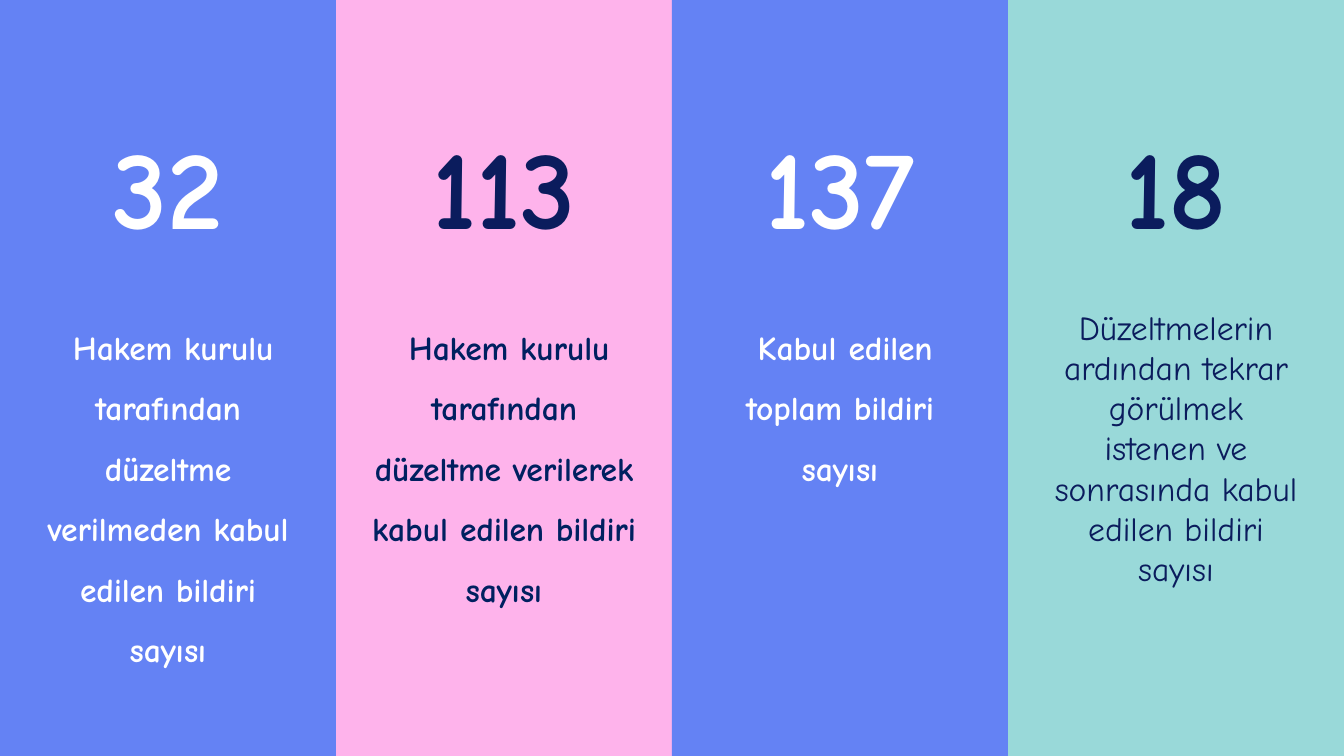
from dataclasses import dataclass

from pptx import Presentation
from pptx.dml.color import RGBColor
from pptx.enum.shapes import MSO_SHAPE
from pptx.enum.text import PP_ALIGN
from pptx.slide import Slide
from pptx.util import Inches, Pt

COLORS = {
    "blue": "6482F4",
    "pink": "FEB3EB",
    "mint": "99D9D9",
    "white": "FFFFFF",
    "navy": "0B1C5D",
    "ink": "002060",
}
FONT = "Comic Neue"
SLIDE_W, SLIDE_H = Inches(13.33), Inches(7.5)
COL, ROW = SLIDE_W / 100, SLIDE_H / 100
PANEL_COLS = 25
NUMBER_ROW, NUMBER_ROWS = 15.6, 18
CAPTION_ROW = 40.53
TEXT_COLS = 18.15


@dataclass(frozen=True)
class Run:
    text: str
    color: str
    size: int = 24
    bold: bool = True
    spacing: int = 0


@dataclass(frozen=True)
class Panel:
    fill: str
    number: Run
    caption: list[Run]
    caption_rows: float
    caption_cols: float = TEXT_COLS
    line_spacing: float = 1.5
    indent: float = 0.1


PANELS = [
    Panel("blue", Run("32", "white", 80), [
        Run("Hakem kurulu tarafından düzeltme verilmeden kabul edilen bildiri sayısı",
            "white", spacing=-10),
    ], 40.4),
    Panel("pink", Run("113", "navy", 80), [
        Run("Hakem kurulu tarafından düzeltme verilerek ", "ink", spacing=-10),
        Run("kabul ", "ink"),
        Run("edilen bildiri sayısı", "ink", spacing=-10),
    ], 40.4, caption_cols=20.18),
    Panel("blue", Run("137", "white", 80), [
        Run("Kabul ", "white"),
        Run("edilen toplam bildiri sayısı", "white", spacing=-10),
    ], 24.27),
    Panel("mint", Run("18", "navy", 80), [
        Run("Düzeltmelerin ardından tekrar görülmek istenen ve sonrasında kabul "
            "edilen bildiri sayısı", "navy", bold=False),
    ], 32.27, line_spacing=1, indent=0),
]


def rgb(name: str) -> RGBColor:
    return RGBColor.from_string(COLORS[name])


def add_background(s: Slide, left: float, fill: str) -> None:
    sp = s.shapes.add_shape(MSO_SHAPE.RECTANGLE, round(left * COL), 0,
                            round(PANEL_COLS * COL), SLIDE_H)
    sp.shadow.inherit = False
    sp.fill.solid()
    sp.fill.fore_color.rgb = rgb(fill)
    sp.line.fill.background()


def add_text(s: Slide, panel_left: float, top: float, cols: float, rows: float,
             runs: list[Run], line_spacing: float = 1, indent: float = 0) -> None:
    left = panel_left + (PANEL_COLS - cols) / 2
    sp = s.shapes.add_textbox(round(left * COL), round(top * ROW),
                              round(cols * COL), round(rows * ROW))
    tf = sp.text_frame
    tf.word_wrap = True
    tf.margin_left = tf.margin_right = tf.margin_top = tf.margin_bottom = 0
    p = tf.paragraphs[0]
    p.alignment = PP_ALIGN.CENTER
    p.line_spacing = line_spacing
    if indent:
        p._p.get_or_add_pPr().set("indent", str(Inches(indent)))
    for run in runs:
        r = p.add_run()
        r.text = run.text
        r.font.name = FONT
        r.font.size = Pt(run.size)
        r.font.bold = run.bold
        r.font.color.rgb = rgb(run.color)
        if run.spacing:
            r._r.get_or_add_rPr().set("spc", str(run.spacing))


def main() -> None:
    """Build the slide of four paper counts, one per coloured column."""
    prs = Presentation()
    prs.slide_width, prs.slide_height = SLIDE_W, SLIDE_H
    s = prs.slides.add_slide(prs.slide_layouts[6])
    for i, panel in enumerate(PANELS):
        left = i * PANEL_COLS
        add_background(s, left, panel.fill)
        add_text(s, left, NUMBER_ROW, TEXT_COLS, NUMBER_ROWS, [panel.number])
        add_text(s, left, CAPTION_ROW, panel.caption_cols, panel.caption_rows,
                 panel.caption, panel.line_spacing, panel.indent)
    prs.save("out.pptx")


if __name__ == "__main__":
    main()
